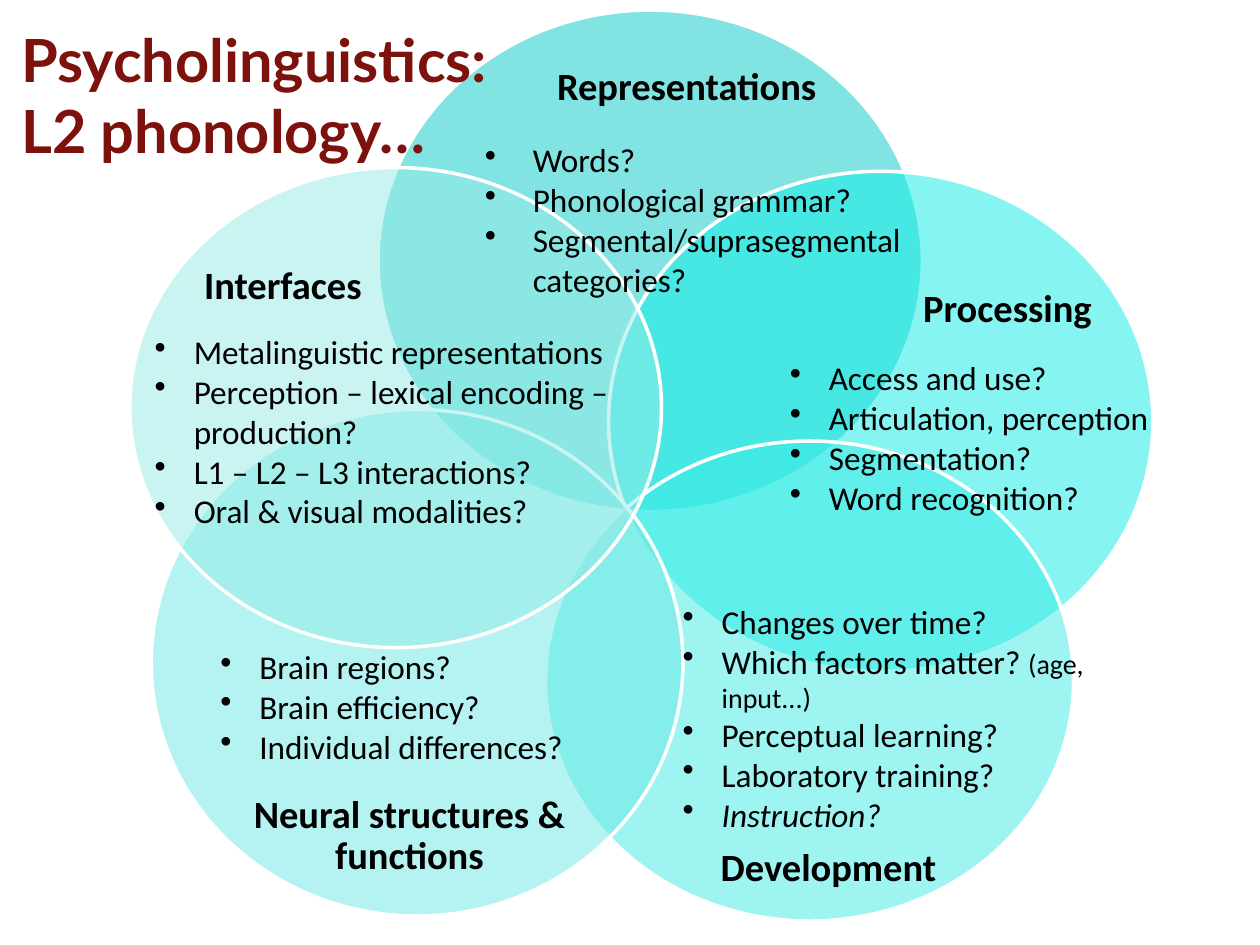
from dataclasses import dataclass

from lxml.etree import SubElement
from pptx import Presentation
from pptx.dml.color import RGBColor
from pptx.enum.shapes import MSO_SHAPE as Shape
from pptx.enum.text import MSO_ANCHOR as Anchor, MSO_AUTO_SIZE as AutoSize, PP_ALIGN as Align
from pptx.oxml.ns import qn
from pptx.util import Inches, Pt


@dataclass(frozen=True)
class Theme:
    body_font: str = "Calibri"
    title_font: str = "Lato"
    ink: str = "000000"
    title_ink: str = "7D110C"
    outline: str = "FFFFFF"
    outline_width: float = 2
    title_size: float = 34
    label_size: float = 22
    bullet_size: float = 19
    aside_size: float = 16
    opacity: int = 50  # percent


THEME = Theme()
COLUMNS, ROWS = 100, 75
CELL = Inches(10) // COLUMNS

# Each petal: colour, circle, label, label area; areas are column, row, width, height
PETALS = [
    ("05CBC7", (30, 0.8, 43.2, 39.8), "Representations", (40.5, 4.1, 28, 5.8)),
    ("0FEDE7", (48.3, 13.6, 43.2, 39.7), "Processing", (70, 21.8, 19.9, 5.6)),
    ("3DEBE5", (43.3, 35, 41.9, 38.1), "Development", (55.5, 65.4, 20.5, 7.1)),
    ("6BE9E4", (12, 32.5, 42.2, 40.2), "Neural structures & functions", (15.7, 62.5, 33.6, 7.8)),
    ("96EAE6", (10.3, 13.3, 42.2, 38.1), "Interfaces", (13.7, 20.5, 17.5, 4.5)),
]

# Each list: area, hanging indent in columns, items; an item is a list of (text, style) runs
LISTS = [
    ((37.5, 10.6, 35.9, 13.8), 3.8, [
        [("Words?", {})],
        [("Phonological grammar?", {})],
        [("Segmental/suprasegmental categories?", {})],
    ]),
    ((61.7, 27.9, 31.7, 13.8), 3.1, [
        [("Access and use?", {})],
        [("Articulation, perception", {})],
        [("Segmentation?", {})],
        [("Word recognition?", {})],
    ]),
    ((11.3, 25.8, 38.7, 17), 3.1, [
        [("Metalinguistic representations", {})],
        [("Perception – lexical encoding – production?", {})],
        [("L1 – L2 – L3 interactions?", {})],
        [("Oral & visual modalities?", {})],
    ]),
    ((16.5, 50.8, 29.3, 10.6), 3.1, [
        [("Brain regions?", {})],
        [("Brain efficiency?", {})],
        [("Individual differences?", {})],
    ]),
    ((53.2, 47.2, 37.6, 19.7), 3.1, [
        [("Changes over time?", {})],
        [("Which factors matter? ", {}), ("(age, input...)", {"size": THEME.aside_size})],
        [("Perceptual learning?", {})],
        [("Laboratory training?", {})],
        [("Instruction?", {"italic": True})],
    ]),
]


def cells(*counts):
    return [round(count * CELL) for count in counts]


def add_span(para, text, size, font=THEME.body_font, color=THEME.ink, bold=False, italic=False):
    span = para.add_run()
    span.text = text
    span.font.name = font
    span.font.size = Pt(size)
    span.font.bold = bold
    span.font.italic = italic
    span.font.color.rgb = RGBColor.from_string(color)


def add_box(page, area):
    frame = page.shapes.add_textbox(*cells(*area)).text_frame
    frame.word_wrap = True
    return frame


def add_circle(page, area, color):
    circle = page.shapes.add_shape(Shape.OVAL, *cells(*area))
    circle.shadow.inherit = False
    circle.fill.solid()
    circle.fill.fore_color.rgb = RGBColor.from_string(color)
    tint = circle.fill._xPr.find(f"{qn('a:solidFill')}/{qn('a:srgbClr')}")
    SubElement(tint, qn("a:alpha"), val=str(THEME.opacity * 1000))
    circle.line.color.rgb = RGBColor.from_string(THEME.outline)
    circle.line.width = Pt(THEME.outline_width)


def add_label(page, area, text):
    frame = add_box(page, area)
    frame.vertical_anchor = Anchor.MIDDLE
    frame.margin_left = frame.margin_right = frame.margin_top = frame.margin_bottom = 0
    para = frame.paragraphs[0]
    para.alignment = Align.CENTER
    para.line_spacing = 0.9
    add_span(para, text, THEME.label_size, bold=True)


def add_bullets(page, area, indent, items):
    frame = add_box(page, area)
    frame.auto_size = AutoSize.SHAPE_TO_FIT_TEXT
    hang = cells(indent)[0]
    for index, item in enumerate(items):
        para = frame.add_paragraph() if index else frame.paragraphs[0]
        props = para._p.get_or_add_pPr()
        props.set("marL", str(hang))
        props.set("indent", str(-hang))
        SubElement(props, qn("a:buChar"), char="•")
        for text, style in item:
            add_span(para, text, **{"size": THEME.bullet_size, **style})


def add_title(page, area, text):
    frame = add_box(page, area)
    frame.auto_size = AutoSize.SHAPE_TO_FIT_TEXT
    add_span(frame.paragraphs[0], text, THEME.title_size, THEME.title_font,
             THEME.title_ink, bold=True)


def main():
    deck = Presentation()
    deck.slide_width, deck.slide_height = COLUMNS * CELL, ROWS * CELL
    page = deck.slides.add_slide(deck.slide_layouts[6])

    # Overlapping circles with their headings
    for color, circle_area, label, label_area in PETALS:
        add_circle(page, circle_area, color)
        add_label(page, label_area, label)

    # Title and the questions within each circle
    add_title(page, (0.7, 1.3, 40.2, 12.5), "Psycholinguistics: L2 phonology…")
    for area, indent, items in LISTS:
        add_bullets(page, area, indent, items)

    deck.save("out.pptx")


if __name__ == "__main__":
    main()
